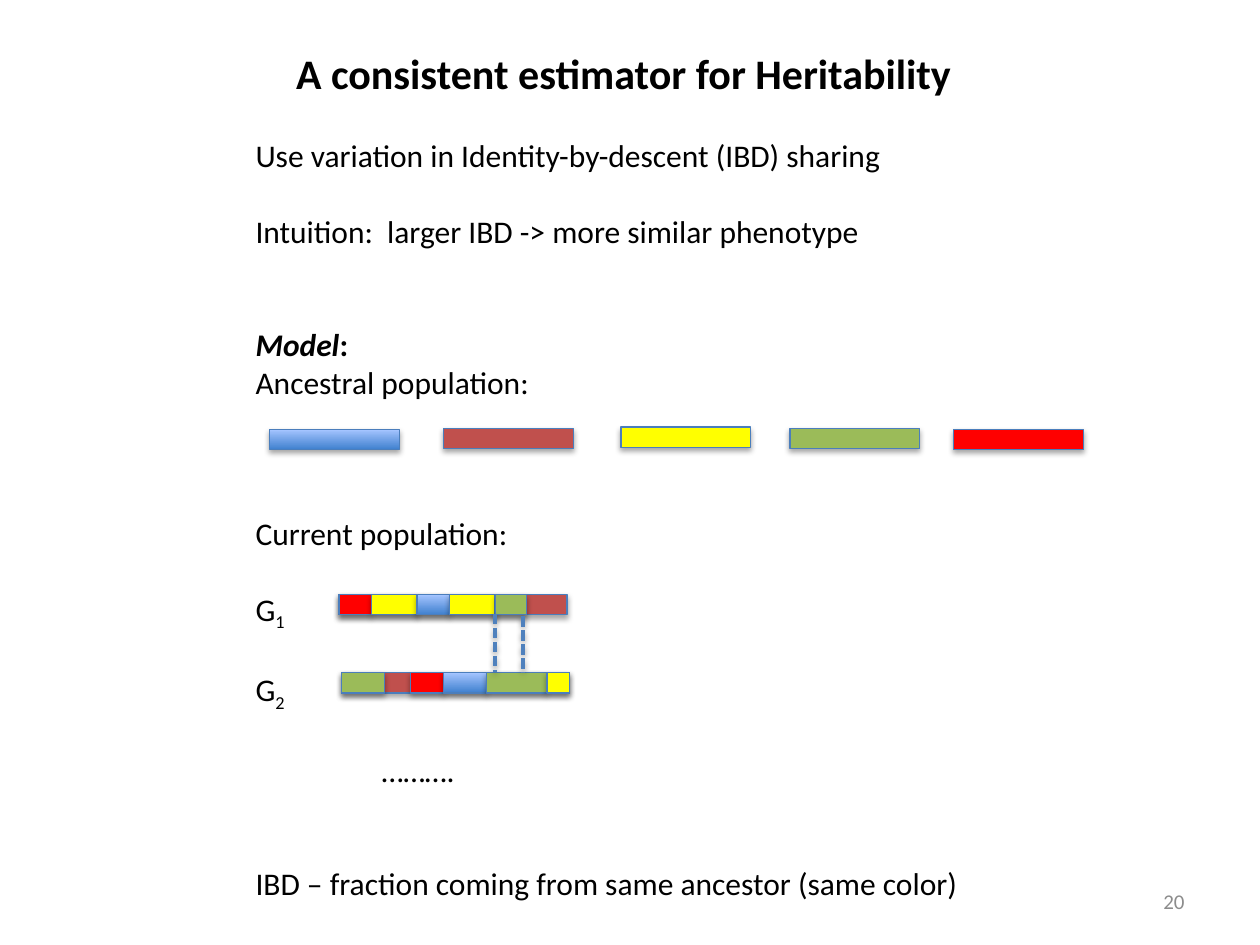
from pptx import Presentation
from pptx.dml.color import RGBColor
from pptx.enum.dml import MSO_LINE_DASH_STYLE as DASH
from pptx.enum.shapes import MSO_CONNECTOR as CONN, MSO_SHAPE as SHAPE
from pptx.enum.text import MSO_ANCHOR as ANCHOR, MSO_AUTO_SIZE as FIT, PP_ALIGN as ALIGN
from pptx.util import Inches, Pt

BLACK = RGBColor(0x00, 0x00, 0x00)
GRAY = RGBColor(0x8C, 0x8C, 0x8C)
OUTLINE = RGBColor(0x4B, 0x7E, 0xBC)
DASHED = RGBColor(0x4F, 0x81, 0xBD)
BROWN = RGBColor(0xC0, 0x50, 0x4D)
YELLOW = RGBColor(0xFF, 0xFF, 0x00)
GREEN = RGBColor(0x9B, 0xBB, 0x59)
RED = RGBColor(0xFF, 0x00, 0x00)
BLUE = (RGBColor(0x3F, 0x80, 0xCE), RGBColor(0xA4, 0xC4, 0xFF))  # bottom, top

BAR_H = 0.16
ANCESTOR_W, GENOME_W = 1.03, 1.81
LINE_PT = 21.6  # height of one text line

# (blank lines before, runs as (text, format))
BODY = [
    (0, [("Use variation in Identity-by-descent (IBD) sharing", {})]),
    (1, [("Intuition:  larger IBD -> more similar phenotype", {})]),
    (2, [("Model", {"bold": True, "italic": True}), (":", {"bold": True})]),
    (0, [("Ancestral population:", {})]),
    (3, [("Current population:", {})]),
    (1, [("G", {}), ("1", {"sub": True})]),
    (1, [("G", {}), ("2", {"sub": True})]),
    (1, [("……….", {"indent": 1})]),
    (2, [("IBD – fraction coming from same ancestor (same color)", {})]),
]
ANCESTORS = [(2.14, 3.41, BLUE), (3.52, 3.4, BROWN), (4.93, 3.39, YELLOW),
             (6.27, 3.4, GREEN), (7.57, 3.41, RED)]
# (left, top, segments as (colour, width)); the brown base shows in the gaps
GENOMES = [
    (2.69, 4.72, [(RED, 0.26), (YELLOW, 0.36), (BLUE, 0.26), (YELLOW, 0.36),
                  (GREEN, 0.25)]),
    (2.71, 5.34, [(GREEN, 0.34), (None, 0.21), (RED, 0.26), (BLUE, 0.34),
                  (GREEN, 0.48), (YELLOW, 0.18)]),
]


def place(sp, *box):
    for name, value in zip(("left", "top", "width", "height"), box):
        setattr(sp, name, Inches(value))


def set_frame(tf, **fmt):
    for name, value in fmt.items():
        setattr(tf, name, value)


def add_run(p, text, size, color=BLACK, sub=False, **fmt):
    r = p.add_run()
    r.text = text
    for name, value in {"name": "Calibri", "size": Pt(size), **fmt}.items():
        setattr(r.font, name, value)
    r.font.color.rgb = color
    if sub:
        r.font._element.set("baseline", "-25000")


def add_title(s, text):
    sp = s.shapes.title
    place(sp, 2.25, 0.33, 5.46, 0.5)
    set_frame(sp.text_frame, word_wrap=False, auto_size=FIT.SHAPE_TO_FIT_TEXT,
              vertical_anchor=ANCHOR.TOP)
    p = sp.text_frame.paragraphs[0]
    p.alignment = ALIGN.LEFT
    add_run(p, text, 24, bold=True)


def add_body(s):
    tf = s.shapes.add_textbox(*map(Inches, (1.93, 1.03, 5.84, 6.46))).text_frame
    set_frame(tf, word_wrap=False, auto_size=FIT.SHAPE_TO_FIT_TEXT)
    for i, (gap, runs) in enumerate(BODY):
        p = tf.add_paragraph() if i else tf.paragraphs[0]
        p.space_before = Pt(gap * LINE_PT)
        for text, fmt in runs:
            fmt = dict(fmt)
            indent = fmt.pop("indent", 0)
            if indent:
                p._p.get_or_add_pPr().set("marL", str(Inches(indent)))
            add_run(p, text, 18, **fmt)


def add_page_number(s, number):
    tf = s.shapes.add_textbox(*map(Inches, (7.17, 6.95, 2.33, 0.4))).text_frame
    set_frame(tf, word_wrap=True, vertical_anchor=ANCHOR.MIDDLE)
    tf.paragraphs[0].alignment = ALIGN.RIGHT
    add_run(tf.paragraphs[0], number, 12, GRAY)


def add_bar(group, left, top, width, color):
    """Bar with the theme's soft shadow; a colour pair makes a gradient."""
    sp = group.shapes.add_shape(SHAPE.RECTANGLE,
                                *map(Inches, (left, top, width, BAR_H)))
    if color is BLUE:
        sp.fill.gradient()
        sp.fill.gradient_angle = 90
        for stop, rgb, pos in zip(sp.fill.gradient_stops, BLUE, (0, 1)):
            stop.color.rgb = rgb
            stop.position = pos
    else:
        sp.fill.solid()
        sp.fill.fore_color.rgb = color
    sp.line.color.rgb = OUTLINE
    sp.line.width = Pt(0.75)


def add_genome(group, left, top, segments):
    add_bar(group, left, top, GENOME_W, BROWN)
    for color, width in segments:
        if color is not None:
            add_bar(group, left, top, width, color)
        left += width


def add_dashed_line(group, x, top, bottom):
    line = group.shapes.add_connector(CONN.STRAIGHT,
                                      *map(Inches, (x, top, x, bottom))).line
    line.color.rgb = DASHED
    line.width = Pt(2)
    line.dash_style = DASH.SQUARE_DOT


def main():
    prs = Presentation()
    prs.slide_width, prs.slide_height = Inches(10), Inches(7.5)
    s = prs.slides.add_slide(prs.slide_layouts[5])

    # Text
    add_title(s, "A consistent estimator for Heritability")
    add_body(s)
    add_page_number(s, "20")

    # Ancestral population
    ancestors = s.shapes.add_group_shape()
    for left, top, color in ANCESTORS:
        add_bar(ancestors, left, top, ANCESTOR_W, color)

    # Current population, with the shared stretch marked
    current = s.shapes.add_group_shape()
    for genome in GENOMES:
        add_genome(current, *genome)
    add_dashed_line(current, 4.15, 4.89, 5.34)
    add_dashed_line(current, 3.93, 4.87, 5.33)

    prs.save("out.pptx")


if __name__ == "__main__":
    main()
